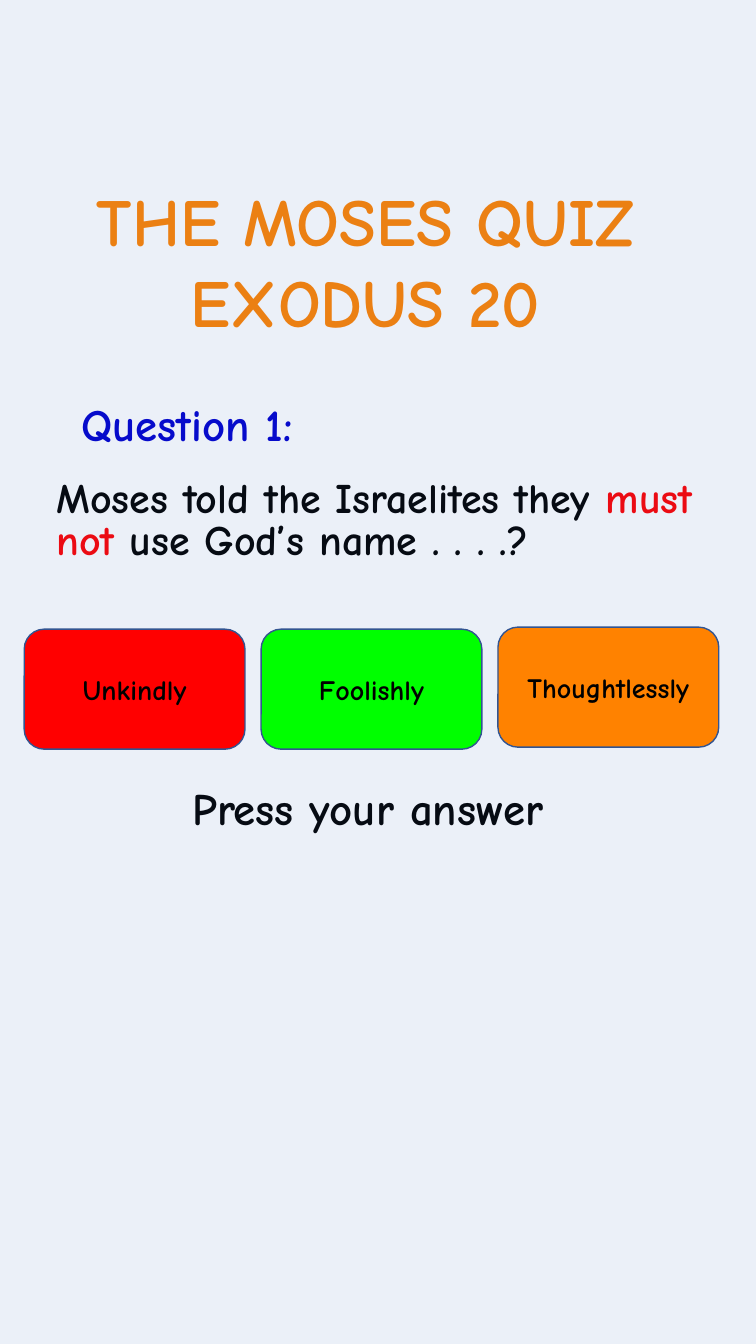
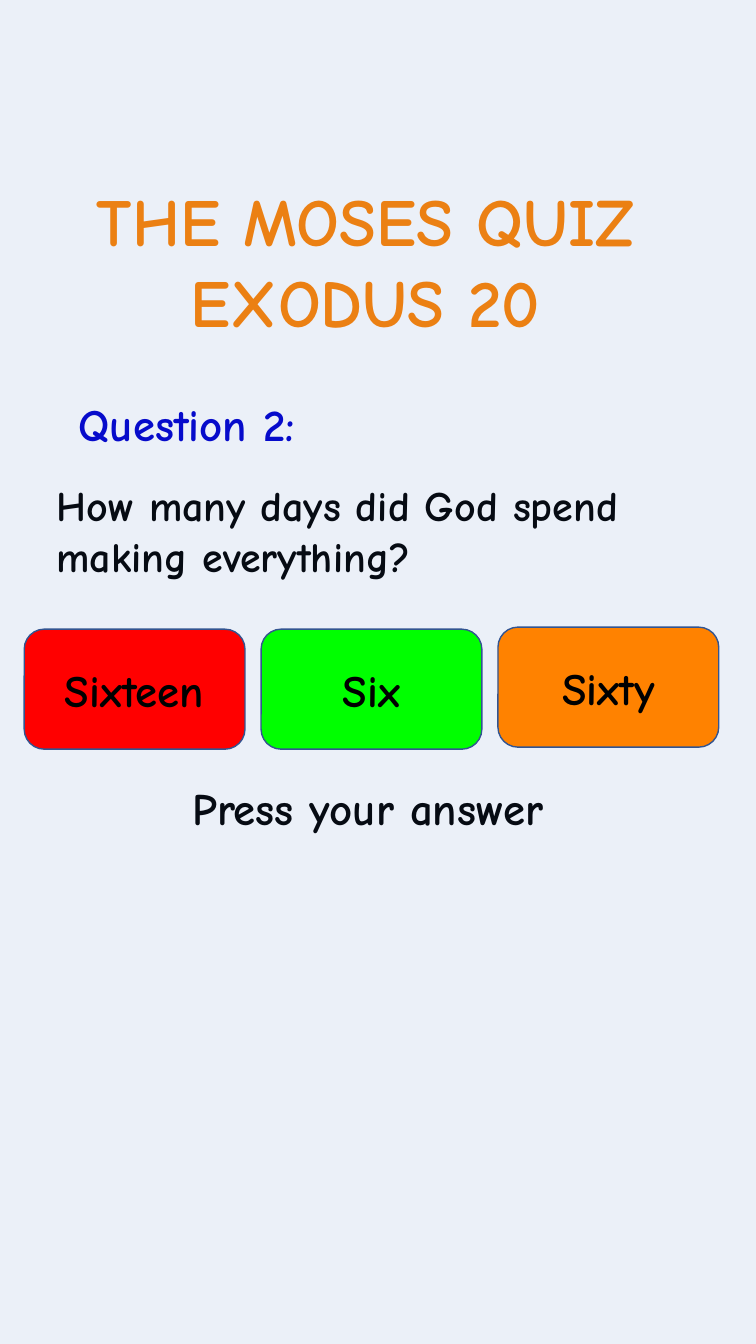
from lxml import etree
from pptx import Presentation
from pptx import util as u
from pptx.dml.color import RGBColor
from pptx.enum import shapes, text
from pptx.oxml.ns import qn

HEADING = ["THE MOSES QUIZ ", "EXODUS 20 "]
PROMPT = "Press your answer"
QUESTIONS = [
    {"label": "Question 1:",
     "spans": [("Moses told the Israelites they ", "000000"),
               ("must not ", "FF0000"),
               ("use God’s name . . . .?", "000000")],
     "leading": 30, "answers": ["Unkindly", "Foolishly", "Thoughtlessly"],
     "answer_size": 20, "veil_at": (-0.29, -0.22)},
    {"label": "Question 2:",
     "spans": [("How many days did God spend making everything?", "000000")],
     "leading": 36, "answers": ["Sixteen", "Six", "Sixty"],
     "answer_size": 32, "veil_at": (-0.38, -0.31)},
]

FONT = "Comic Neue"
BLACK, BLUE, ORANGE, RED, GREEN = "000000", "0000CC", "FF8200", "FF0000", "00FF00"
VEIL, EDGE = "4472C4", "325491"
BUTTON_FILLS = [RED, GREEN, ORANGE]
BUTTON_TOPS = [6.24, 6.24, 6.22]
BUTTON_LEFT, BUTTON_STEP, BUTTON_SIZE = 0.24, 2.35, (2.19, 1.19)
LEFT, CENTER = text.PP_ALIGN.LEFT, text.PP_ALIGN.CENTER
TOP, MIDDLE = text.MSO_ANCHOR.TOP, text.MSO_ANCHOR.MIDDLE


def color(value):
    return RGBColor.from_string(value)


def place(box, left, top, width, height):
    box.left, box.top, box.width, box.height = map(u.Inches, (left, top, width, height))


def write(box, paragraphs, size, align=LEFT, anchor=TOP, wrap=True, grow=False,
          leading=None, before=0):
    """Fill a shape with paragraphs, each a list of (text, colour) spans."""
    frame = box.text_frame
    frame.word_wrap, frame.vertical_anchor = wrap, anchor
    frame.auto_size = (text.MSO_AUTO_SIZE.SHAPE_TO_FIT_TEXT if grow
                       else text.MSO_AUTO_SIZE.NONE)
    for index, spans in enumerate(paragraphs):
        para = frame.add_paragraph() if index else frame.paragraphs[0]
        para.alignment, para.space_before = align, u.Pt(before)
        if leading:
            para.line_spacing = leading
        for words, ink in spans:
            span = para.add_run()
            span.text = words
            span.font.name, span.font.size, span.font.bold = FONT, u.Pt(size), True
            span.font.color.rgb = color(ink)


def outline_text(box, ink, width):
    for para in box.text_frame.paragraphs:
        for span in para.runs:
            line = etree.Element(qn("a:ln"), w=str(u.Pt(width)))
            fill = etree.SubElement(line, qn("a:solidFill"))
            etree.SubElement(fill, qn("a:srgbClr"), val=ink)
            span.font._element.insert(0, line)


def add_panel(page, kind, area, fill, alpha=None):
    panel = page.shapes.add_shape(kind, *map(u.Inches, area))
    panel.shadow.inherit = False
    panel.fill.solid()
    panel.fill.fore_color.rgb = color(fill)
    if alpha is not None:
        tint = panel._element.spPr.find(qn("a:solidFill"))[0]
        etree.SubElement(tint, qn("a:alpha"), val=str(alpha * 1000))
    panel.line.color.rgb = color(EDGE)
    panel.line.width = u.Pt(1)
    return panel


def add_label(page, words, area, ink, **style):
    box = page.shapes.add_textbox(*map(u.Inches, area))
    write(box, [[(words, ink)]], 32, **style)


def add_question(deck, question):
    page = deck.slides.add_slide(deck.slide_layouts[0])
    title, body = page.shapes.title, page.placeholders[1]

    place(title, 0.3, 1.73, 6.89, 1.72)
    write(title, [[(words, ORANGE)] for words in HEADING], 48,
          align=CENTER, wrap=False, grow=True)
    outline_text(title, RED, 1.06)

    place(body, 0.46, 4.71, 6.94, 1.19)
    write(body, [question["spans"]], 30, leading=u.Pt(question["leading"]), before=7.5)

    add_label(page, question["label"], (0.47, 3.89, 2.77, 0.64), BLUE,
              align=CENTER, wrap=False, grow=True)
    add_label(page, PROMPT, (1.81, 7.75, 4.22, 0.72), BLACK, leading=0.9, before=7.5)

    add_panel(page, shapes.MSO_SHAPE.RECTANGLE, (*question["veil_at"], 8.16, 13.78),
              VEIL, alpha=10)
    buttons = zip(question["answers"], BUTTON_FILLS, BUTTON_TOPS)
    for column, (answer, fill, top) in enumerate(buttons):
        area = (BUTTON_LEFT + column * BUTTON_STEP, top, *BUTTON_SIZE)
        button = add_panel(page, shapes.MSO_SHAPE.ROUNDED_RECTANGLE, area, fill)
        write(button, [[(answer, BLACK)]], question["answer_size"],
              align=CENTER, anchor=MIDDLE)


def main():
    deck = Presentation()
    deck.slide_width, deck.slide_height = u.Inches(7.5), u.Inches(13.33)
    for question in QUESTIONS:
        add_question(deck, question)
    deck.save("out.pptx")


if __name__ == "__main__":
    main()
